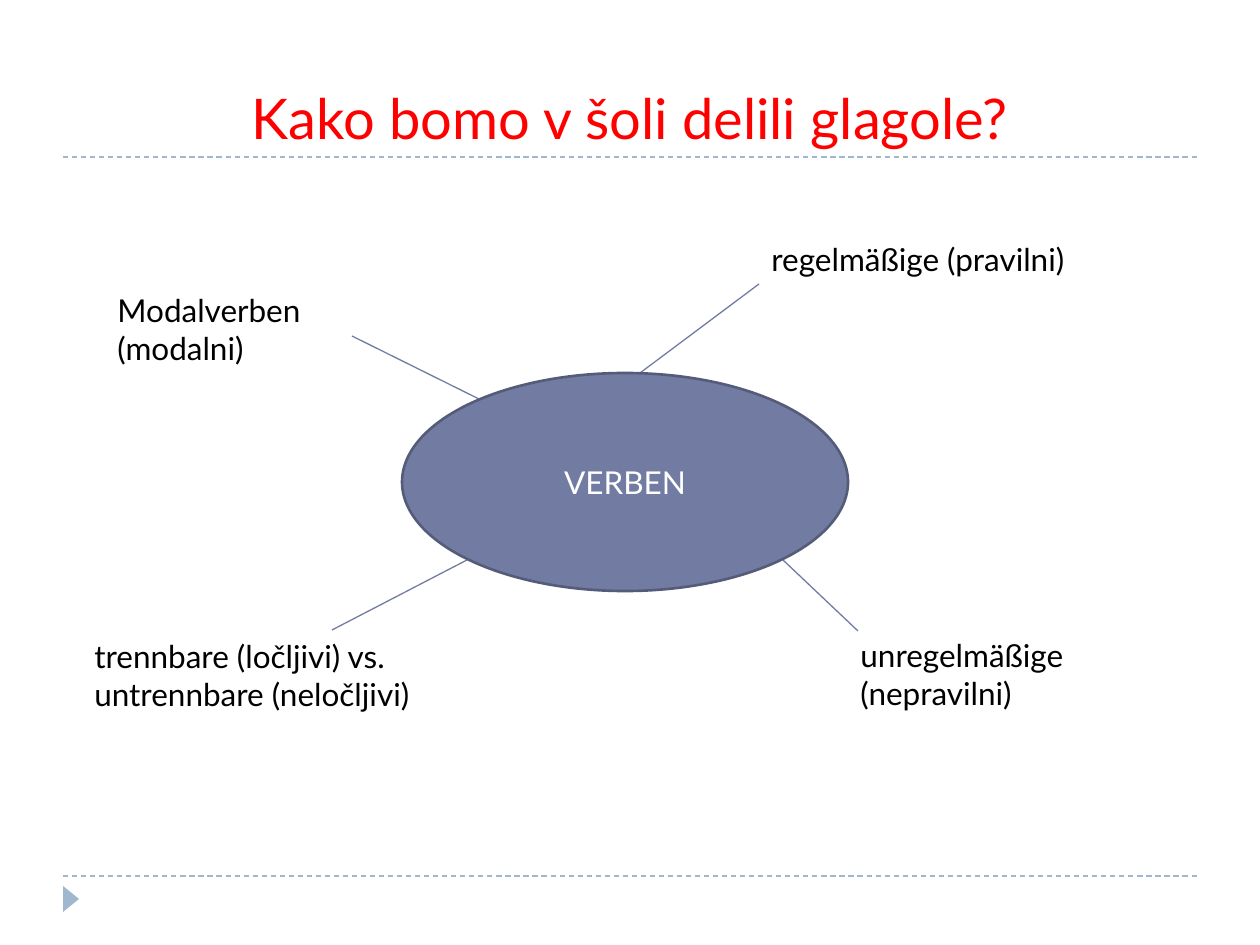
"""Build a slide that sorts German verbs into four groups around a hub."""
from pptx import Presentation
from pptx.dml.color import RGBColor as RGB
from pptx.enum.dml import MSO_LINE as Dash
from pptx.enum.shapes import MSO_CONNECTOR as Link, MSO_SHAPE as Shape
from pptx.enum.text import MSO_ANCHOR as Anchor, PP_ALIGN as Align
from pptx.oxml.ns import qn
from pptx.util import Pt
from lxml.etree import SubElement

SCALE = 914400 / 126
RED = RGB(0xFF, 0x00, 0x00)
BLACK = RGB(0x00, 0x00, 0x00)
WHITE = RGB(0xFF, 0xFF, 0xFF)
PALE = RGB(0x9F, 0xB8, 0xCD)
SLATE = RGB(0x72, 0x7C, 0xA3)
DARK = RGB(0x54, 0x5C, 0x79)


def emu(*sizes):
    return [round(size * SCALE) for size in sizes]


def write(shape, text, size, color, align, anchor):
    frame = shape.text_frame
    frame.word_wrap = True
    frame.vertical_anchor = anchor
    frame.text = text
    para = frame.paragraphs[0]
    para.alignment = align
    font = para.runs[0].font
    font.name = "Lato"
    font.size = Pt(size)
    font.color.rgb = color


deck = Presentation()
deck.slide_width, deck.slide_height = emu(1260, 945)
slide = deck.slides.add_slide(deck.slide_layouts[6])
shapes = slide.shapes

rules = [(63, y, 1197, y, PALE) for y in (876, 157)]
spokes = [
    (640, 373, 759, 284, SLATE),
    (783, 560, 858, 631, SLATE),
    (481, 400, 352, 336, SLATE),
    (467, 560, 332, 630, SLATE),
]
for *ends, color in rules + spokes:
    line = shapes.add_connector(Link.STRAIGHT, *emu(*ends))
    line.line.color.rgb = color
    line.line.width = Pt(0.75)
    if color == PALE:
        line.line.dash_style = Dash.DASH
    SubElement(line.element.spPr, qn("a:effectLst"))

mark = shapes.add_shape(Shape.ISOSCELES_TRIANGLE, *emu(58, 891, 26, 16))
mark.rotation = 90
mark.shadow.inherit = False
mark.fill.solid()
mark.fill.fore_color.rgb = PALE
mark.line.fill.background()

title = shapes.add_textbox(*emu(63, 21, 1134, 136))
write(title, "Kako bomo v šoli delili glagole?", 32, RED, Align.CENTER, Anchor.BOTTOM)

hub = shapes.add_shape(Shape.OVAL, *emu(402, 373, 446, 218))
hub.shadow.inherit = False
hub.fill.solid()
hub.fill.fore_color.rgb = SLATE
hub.line.color.rgb = DARK
hub.line.width = Pt(1.5)
write(hub, "VERBEN", 18, WHITE, Align.CENTER, Anchor.MIDDLE)

groups = [
    (759, 234, 348, 50, "regelmäßige (pravilni)"),
    (848, 630, 297, 89, "unregelmäßige (nepravilni)"),
    (105, 285, 248, 89, "Modalverben (modalni)"),
    (82, 631, 388, 89, "trennbare (ločljivi) vs. untrennbare (neločljivi)"),
]
for *place, text in groups:
    label = shapes.add_textbox(*emu(*place))
    write(label, text, 18, BLACK, Align.LEFT, Anchor.TOP)

deck.save("out.pptx")
